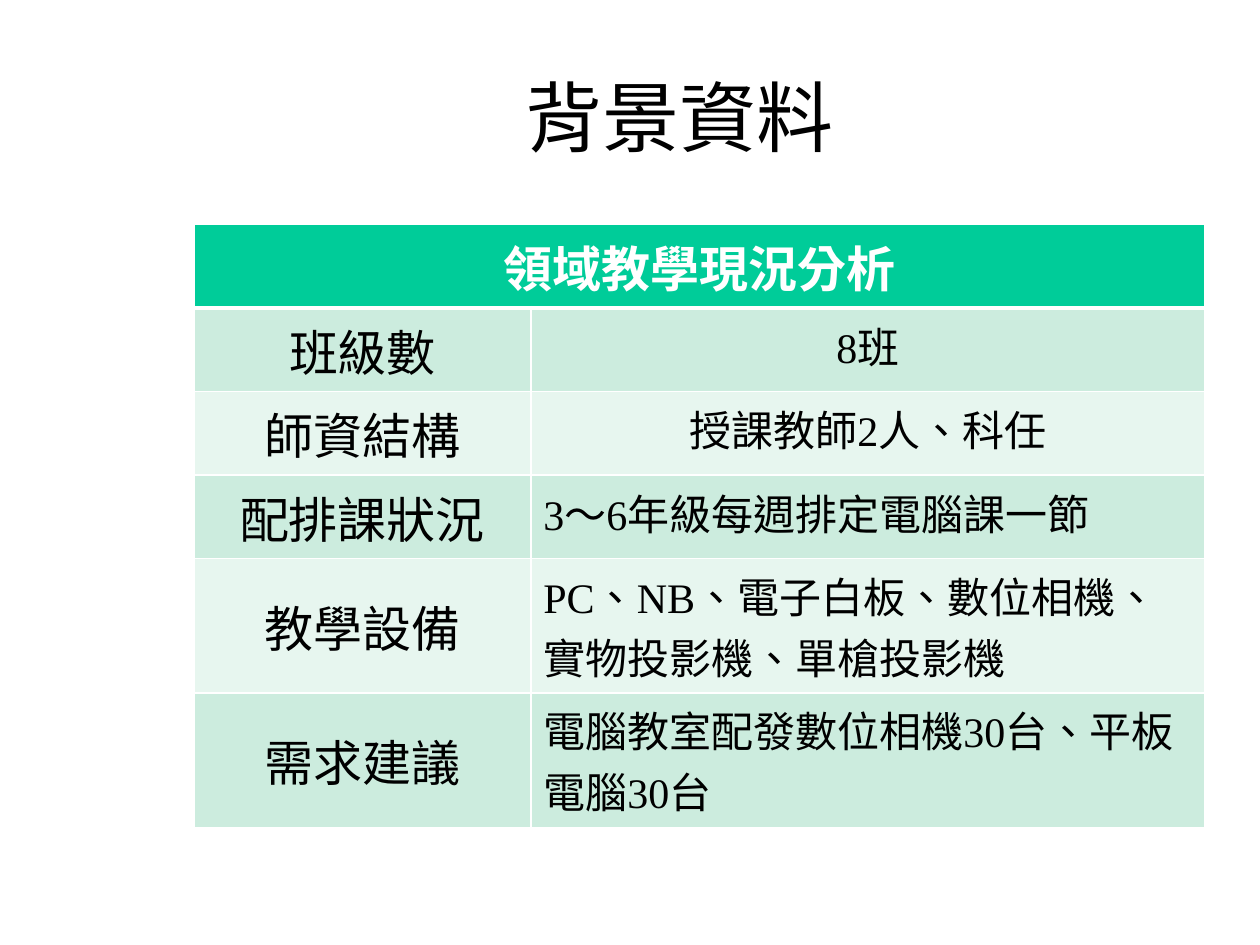
from dataclasses import dataclass

from lxml import etree
from pptx import Presentation
from pptx.dml.color import RGBColor
from pptx.enum import lang, text
from pptx.oxml import ns
from pptx.util import Cm, Pt

FONT = "Times New Roman"
BLACK = RGBColor(0x00, 0x00, 0x00)
WHITE = RGBColor(0xFF, 0xFF, 0xFF)
GREEN = RGBColor(0x00, 0xCC, 0x99)
BANDS = (RGBColor(0xCC, 0xEC, 0xDE), RGBColor(0xE7, 0xF6, 0xEF))
CENTER, LEFT = text.PP_ALIGN.CENTER, text.PP_ALIGN.LEFT
TOP, MIDDLE = text.MSO_ANCHOR.TOP, text.MSO_ANCHOR.MIDDLE


@dataclass
class Entry:
    label: str
    detail: str
    alignment: text.PP_ALIGN = LEFT


HEADING = "領域教學現況分析"
ENTRIES = [
    Entry("班級數", "8班", CENTER),
    Entry("師資結構", "授課教師2人、科任", CENTER),
    Entry("配排課狀況", "3～6年級每週排定電腦課一節"),
    Entry("教學設備", "PC、NB、電子白板、數位相機、實物投影機、單槍投影機"),
    Entry("需求建議", "電腦教室配發數位相機30台、平板電腦30台"),
]


def write(frame, wording: str, size: int, color: RGBColor = BLACK,
          alignment: text.PP_ALIGN = CENTER, bold: bool = False) -> None:
    paragraph = frame.paragraphs[0]
    paragraph.alignment = alignment
    run = paragraph.add_run()
    run.text = wording
    font = run.font
    font.name, font.size, font.bold = FONT, Pt(size), bold
    font.color.rgb = color
    font.language_id = lang.MSO_LANGUAGE_ID.TRADITIONAL_CHINESE


def style_cell(cell, fill: RGBColor, anchor: text.MSO_ANCHOR,
               top: float = 1, bottom: float = 1) -> None:
    cell.vertical_anchor = anchor
    cell.fill.solid()
    cell.fill.fore_color.rgb = fill
    properties = cell._tc.get_or_add_tcPr()
    # Borders come before the fill in the cell properties
    widths = {"lnL": 1, "lnR": 1, "lnT": top, "lnB": bottom}
    for index, (side, width) in enumerate(widths.items()):
        line = etree.Element(ns.qn(f"a:{side}"), w=str(Pt(width)))
        solid = etree.SubElement(line, ns.qn("a:solidFill"))
        etree.SubElement(solid, ns.qn("a:srgbClr"), val=str(WHITE))
        properties.insert(index, line)


def add_title(slide, wording: str) -> None:
    title = slide.shapes.title
    title.left, title.top = Cm(2.9), Cm(0.74)
    title.width, title.height = Cm(21.59), Cm(3.18)
    title.text_frame.vertical_anchor = MIDDLE
    write(title.text_frame, wording, 44)


def add_analysis_table(slide) -> None:
    row_height = Cm(1.63)
    row_count = len(ENTRIES) + 1
    table = slide.shapes.add_table(
        row_count, 2, Cm(3.91), Cm(4.53), Cm(20.38), row_height * row_count).table
    table.columns[0].width, table.columns[1].width = Cm(6.79), Cm(13.59)
    for row in table.rows:
        row.height = row_height

    # Heading across both columns
    heading = table.cell(0, 0)
    heading.merge(table.cell(0, 1))
    for column in range(2):
        style_cell(table.cell(0, column), GREEN, TOP, bottom=3)
    write(heading.text_frame, HEADING, 28, WHITE, bold=True)

    # Banded rows of label and detail
    for number, entry in enumerate(ENTRIES, start=1):
        label, detail = table.cell(number, 0), table.cell(number, 1)
        for cell, anchor in ((label, MIDDLE), (detail, TOP)):
            style_cell(cell, BANDS[(number - 1) % 2], anchor,
                       top=3 if number == 1 else 1)
        write(label.text_frame, entry.label, 28)
        write(detail.text_frame, entry.detail, 24, alignment=entry.alignment)


def main() -> None:
    presentation = Presentation()
    presentation.slide_width, presentation.slide_height = Cm(25.4), Cm(19.05)
    slide = presentation.slides.add_slide(presentation.slide_layouts[5])
    add_title(slide, "背景資料")
    add_analysis_table(slide)
    presentation.save("out.pptx")


if __name__ == "__main__":
    main()
